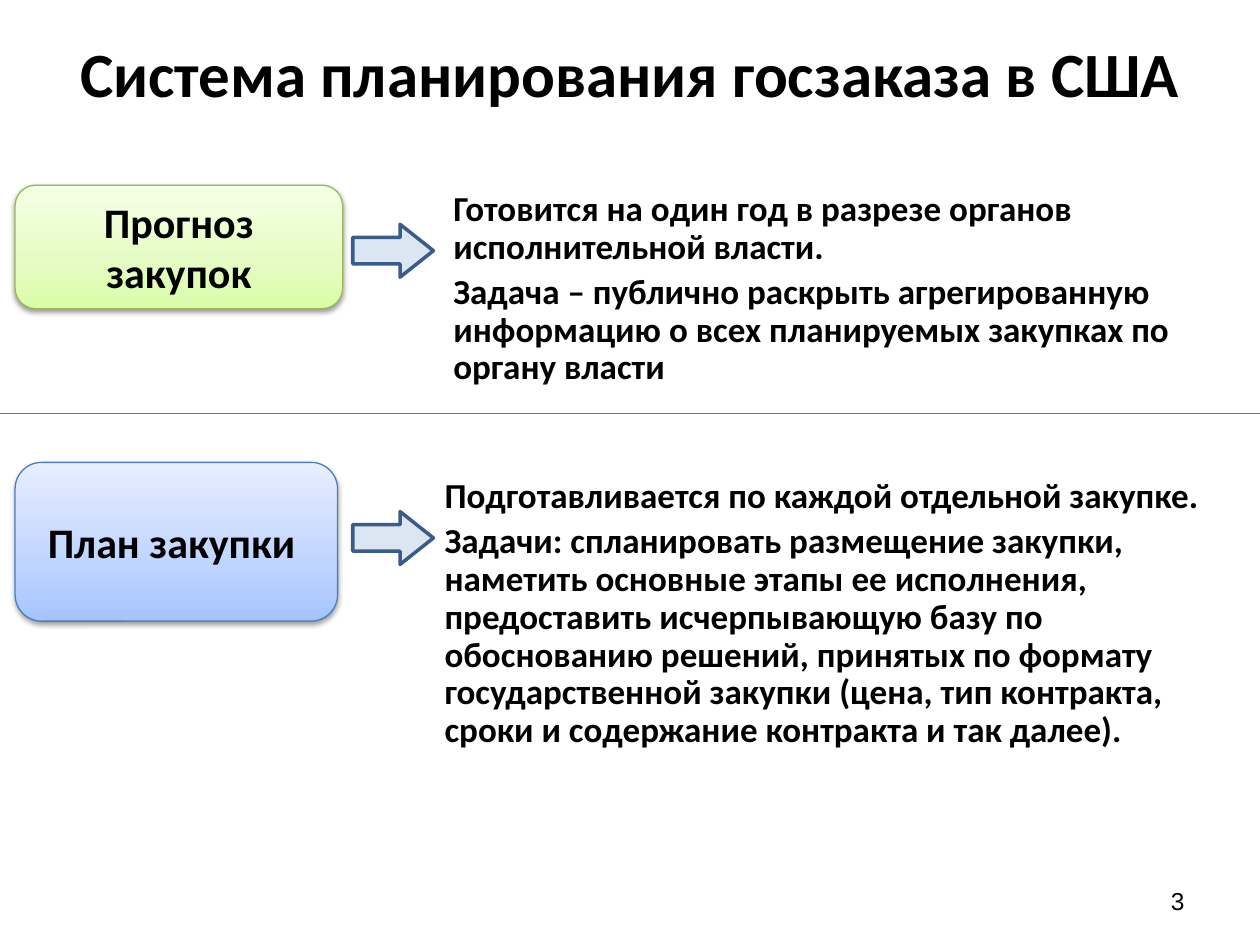
from lxml import etree
from copy import deepcopy
from pptx import Presentation
from pptx.dml.color import RGBColor
from pptx.enum.shapes import MSO_CONNECTOR, MSO_SHAPE
from pptx.enum.text import MSO_ANCHOR, PP_ALIGN
from pptx.oxml.ns import qn
from pptx.util import Inches, Pt

ARROW, ROUND = MSO_SHAPE.RIGHT_ARROW, MSO_SHAPE.ROUNDED_RECTANGLE
STRAIGHT = MSO_CONNECTOR.STRAIGHT
MIDDLE = MSO_ANCHOR.MIDDLE
LEFT, CENTER, RIGHT = PP_ALIGN.LEFT, PP_ALIGN.CENTER, PP_ALIGN.RIGHT

GREEN = ("DAFDA7", "E4FCC2", "F5FFE7")
BLUE = ("A4C4FF", "BFD4FF", "E6EEFF")
STEPS = [
    ("Прогноз закупок", (0.12, 1.47, 2.6, 0.98), GREEN, "98B955",
     (2.8, 1.78, 0.64, 0.42), (3.5, 1.47, 6.5, 1.68),
     ["Готовится на один год в разрезе органов исполнительной власти.",
      "Задача – публично раскрыть агрегированную информацию о всех "
      "планируемых закупках по органу власти"]),
    ("План закупки ", (0.12, 3.67, 2.56, 1.26), BLUE, "4B7EBC",
     (2.8, 4.06, 0.64, 0.42), (3.43, 3.75, 6.57, 2.29),
     ["Подготавливается по каждой отдельной закупке.",
      "Задачи: спланировать размещение закупки, наметить основные этапы "
      "ее исполнения, предоставить исчерпывающую базу по обоснованию "
      "решений, принятых по формату государственной закупки (цена, тип "
      "контракта, сроки и содержание контракта и так далее)."]),
]


def color(code):
    """Turn a hex string into a colour."""
    return RGBColor.from_string(code)


def inches(box):
    """Turn a box of numbers into lengths."""
    return [Inches(n) for n in box]


def write(frame, lines, size, align, name="Calibri", bold=True):
    """Fill a text frame with one paragraph for each line."""
    frame.word_wrap = True
    frame.text = "\n".join(lines)
    for para in frame.paragraphs:
        para.alignment = align
        font = para.font
        font.name, font.size, font.bold = name, Pt(size), bold
        font.color.rgb = color("000000")


def outline(shape, code, width):
    """Set the line of a shape."""
    shape.line.color.rgb = color(code)
    shape.line.width = Pt(width)


def shade(shape, codes):
    """Give a shape an upward gradient of three colours."""
    fill = shape.fill
    fill.gradient()
    fill.gradient_angle = 90
    stops = shape._element.spPr.find(qn("a:gradFill")).find(qn("a:gsLst"))
    stops.append(deepcopy(stops[-1]))
    for stop, code, place in zip(fill.gradient_stops, codes, (0, 0.35, 1)):
        stop.color.rgb = color(code)
        stop.position = place


def shadow(shape):
    """Drop a soft shadow below a shape."""
    shape.shadow.inherit = False
    effects = shape._element.spPr.find(qn("a:effectLst"))
    outer = etree.SubElement(
        effects, qn("a:outerShdw"), blurRad=str(Pt(3.1)), dist=str(Pt(1.6)),
        dir="5400000", rotWithShape="0")
    black = etree.SubElement(outer, qn("a:srgbClr"), val="000000")
    etree.SubElement(black, qn("a:alpha"), val="38000")


def add_label(slide, box, text, codes, edge):
    """Draw a rounded label with a gradient."""
    shape = slide.shapes.add_shape(ROUND, *inches(box))
    shade(shape, codes)
    outline(shape, edge, 0.75)
    shadow(shape)
    write(shape.text_frame, [text], 24, CENTER)
    shape.text_frame.vertical_anchor = MIDDLE


def add_arrow(slide, box):
    """Draw a pale block arrow."""
    shape = slide.shapes.add_shape(ARROW, *inches(box))
    shape.adjustments[1] = 0.63
    shape.fill.solid()
    shape.fill.fore_color.rgb = color("DCE6F2")
    outline(shape, "385D8A", 2)
    shape.shadow.inherit = False


def add_notes(slide, box, lines):
    """Place the text that explains a label."""
    frame = slide.shapes.add_textbox(*inches(box)).text_frame
    write(frame, lines, 20, LEFT)
    for para in frame.paragraphs:
        para.line_spacing = 0.9
        para.space_before = Pt(4)


def add_title(slide, box, text):
    """Move and format the title."""
    title = slide.shapes.title
    title.left, title.top, title.width, title.height = inches(box)
    write(title.text_frame, [text], 36, CENTER)
    title.text_frame.vertical_anchor = MIDDLE


def add_rule(slide, left, top, width):
    """Draw the line between the two steps."""
    rule = slide.shapes.add_connector(
        STRAIGHT, *inches((left, top, left + width, top)))
    outline(rule, "4B7EBC", 0.75)
    etree.SubElement(rule._element.spPr, qn("a:effectLst"))


def add_number(slide, box, text):
    """Place the slide number."""
    frame = slide.shapes.add_textbox(*inches(box)).text_frame
    write(frame, [text], 14, RIGHT, "Arial", False)
    frame.vertical_anchor = MIDDLE


def main():
    """Build and save the slide."""
    deck = Presentation()
    deck.slide_width, deck.slide_height = Inches(10), Inches(7.5)
    slide = deck.slides.add_slide(deck.slide_layouts[5])
    add_title(slide, (0, 0, 10, 1.15), "Система планирования госзаказа в США")
    for name, box, codes, edge, arrow, area, lines in STEPS:
        add_label(slide, box, name, codes, edge)
        add_arrow(slide, arrow)
        add_notes(slide, area, lines)
    add_rule(slide, 0, 3.28, 10)
    add_number(slide, (7.17, 6.95, 2.33, 0.4), "3")
    deck.save("out.pptx")


if __name__ == "__main__":
    main()
